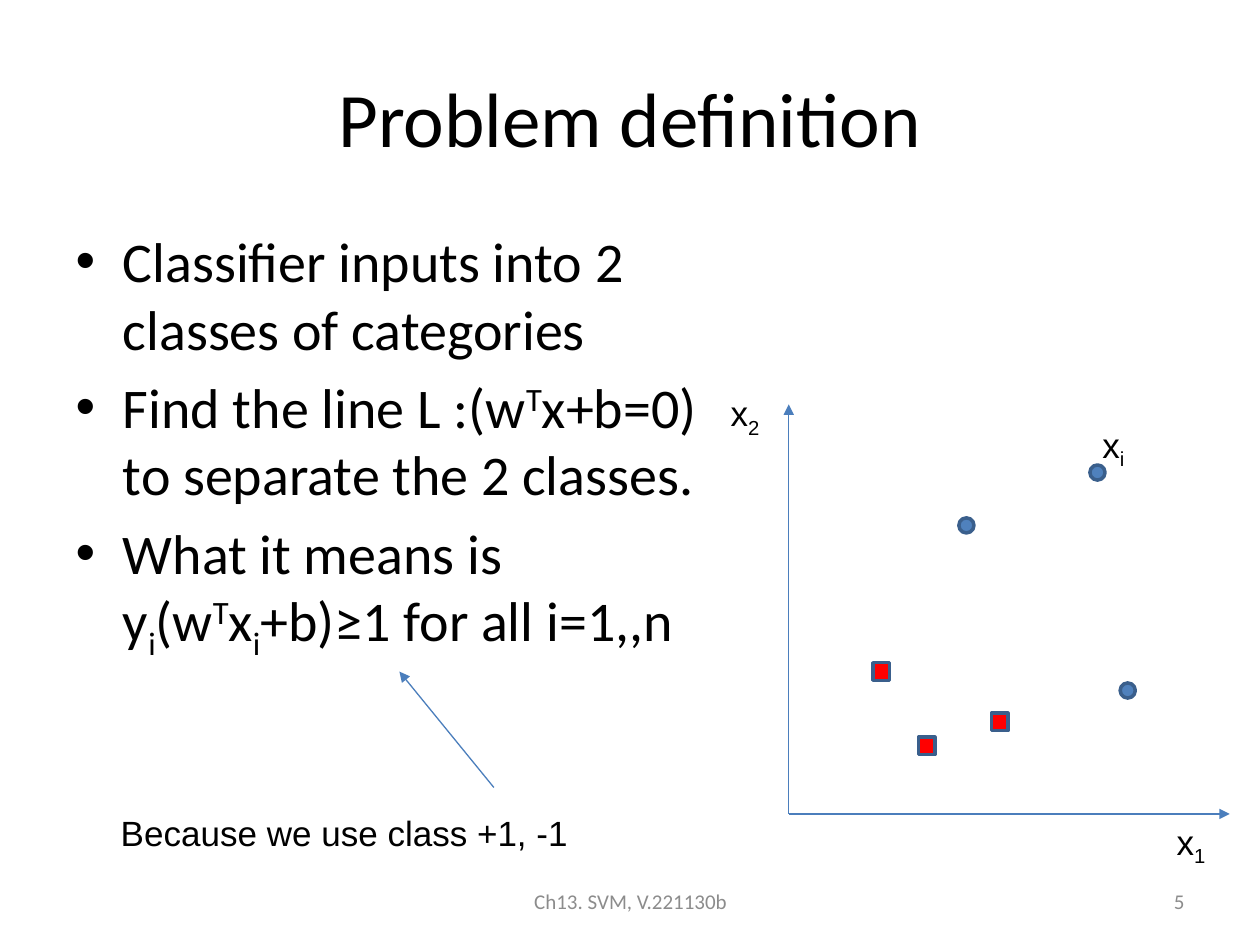
import pptx
import pptx.util
import pptx.dml.color
import pptx.enum.shapes
import pptx.enum.text
import pptx.oxml.ns
from lxml import etree

Inches = pptx.util.Inches
Pt = pptx.util.Pt
RGBColor = pptx.dml.color.RGBColor
MSO_SHAPE = pptx.enum.shapes.MSO_SHAPE
PP_ALIGN = pptx.enum.text.PP_ALIGN
MSO_ANCHOR = pptx.enum.text.MSO_ANCHOR
qn = pptx.oxml.ns.qn

BLACK = RGBColor(0x00, 0x00, 0x00)
GRAY = RGBColor(0x8C, 0x8C, 0x8C)
BLUE = RGBColor(0x4F, 0x81, 0xBD)
RED = RGBColor(0xFF, 0x00, 0x00)
OUTLINE = RGBColor(0x3A, 0x5F, 0x8C)
ARROW = RGBColor(0x4B, 0x7E, 0xBC)

# A piece of text that starts with one of these marks is raised or lowered
BASELINES = {"^": "30000", "_": "-25000"}


def write_paragraph(paragraph, pieces, font="Arial", size=20, color=BLACK,
                    align=PP_ALIGN.LEFT, space_before=0):
    paragraph.alignment = align
    paragraph.space_before = Pt(space_before)
    for piece in pieces:
        baseline = BASELINES.get(piece[0])
        run = paragraph.add_run()
        run.text = piece[1:] if baseline else piece
        run.font.name = font
        run.font.size = Pt(size)
        run.font.color.rgb = color
        if baseline:
            run.font._element.set("baseline", baseline)


class SlideBuilder:
    heading_font = "Calibri"
    marker_line = Pt(2)
    arrow_line = Pt(0.75)

    def __init__(self, presentation):
        self.slide = presentation.slides.add_slide(presentation.slide_layouts[1])

    def place(self, shape, left, top, width, height):
        shape.left, shape.top = Inches(left), Inches(top)
        shape.width, shape.height = Inches(width), Inches(height)

    def title(self, text, *box):
        shape = self.slide.shapes.title
        self.place(shape, *box)
        shape.text_frame.vertical_anchor = MSO_ANCHOR.MIDDLE
        write_paragraph(shape.text_frame.paragraphs[0], [text], size=44,
                        font=self.heading_font, align=PP_ALIGN.CENTER)

    def bullets(self, items, *box):
        shape = self.slide.placeholders[1]
        self.place(shape, *box)
        frame = shape.text_frame
        for index, pieces in enumerate(items):
            paragraph = frame.add_paragraph() if index else frame.paragraphs[0]
            write_paragraph(paragraph, pieces, font=self.heading_font,
                            size=32, space_before=6.4)

    def text(self, pieces, *box, wrap=True, anchor=MSO_ANCHOR.TOP, **style):
        shape = self.slide.shapes.add_textbox(*map(Inches, box))
        shape.text_frame.word_wrap = wrap
        shape.text_frame.vertical_anchor = anchor
        write_paragraph(shape.text_frame.paragraphs[0], pieces, **style)

    def footer(self, text, *box, align):
        self.text([text], *box, anchor=MSO_ANCHOR.MIDDLE, align=align,
                  font=self.heading_font, size=12, color=GRAY)

    def marker(self, kind, fill, *box):
        shape = self.slide.shapes.add_shape(kind, *map(Inches, box))
        shape.shadow.inherit = False
        shape.fill.solid()
        shape.fill.fore_color.rgb = fill
        shape.line.color.rgb = OUTLINE
        shape.line.width = self.marker_line

    def arrow(self, start, end):
        connector = self.slide.shapes.add_connector(
            pptx.enum.shapes.MSO_CONNECTOR.STRAIGHT, *map(Inches, start + end))
        connector.line.color.rgb = ARROW
        connector.line.width = self.arrow_line
        properties = connector._element.spPr
        etree.SubElement(properties.find(qn("a:ln")), qn("a:tailEnd"), type="triangle")
        etree.SubElement(properties, qn("a:effectLst"))


def main():
    presentation = pptx.Presentation()
    presentation.slide_width = Inches(10)
    presentation.slide_height = Inches(7.5)
    builder = SlideBuilder(presentation)

    # Title and list
    builder.title("Problem definition", 0.5, 0.3, 9, 1.25)
    builder.bullets([
        ["Classifier inputs into 2 classes of categories"],
        ["Find the line L :(w", "^T", "x+b=0) to separate the 2 classes."],
        ["What it means is y", "_i", "(w", "^T", "x", "_i", "+b)≥1 for all i=1,,n"],
    ], 0.5, 1.75, 5.2, 4.95)

    # Footer and slide number
    builder.footer("Ch13. SVM, V.221130b", 3.42, 6.95, 3.17, 0.4, align=PP_ALIGN.CENTER)
    builder.footer("5", 7.17, 6.95, 2.33, 0.4, align=PP_ALIGN.RIGHT)

    # Axes with their labels
    origin = (6.26, 6.46)
    builder.arrow(origin, (6.26, 3.21))
    builder.arrow(origin, (9.76, 6.46))
    builder.text(["x", "_1"], 9.24, 6.46, 0.58, 0.44)
    builder.text(["x", "_2"], 5.7, 3.06, 0.58, 0.44)

    # Points of the two classes
    for left, top in [(8.65, 3.69), (8.89, 5.42), (7.61, 4.11)]:
        builder.marker(MSO_SHAPE.OVAL, BLUE, left, top, 0.12, 0.12)
    for left, top in [(7.87, 5.66), (7.29, 5.85), (6.93, 5.26)]:
        builder.marker(MSO_SHAPE.RECTANGLE, RED, left, top, 0.13, 0.14)
    builder.text(["x", "_i"], 8.65, 3.31, 0.38, 0.44, wrap=False)

    # Remark on the inequality
    builder.text(["Because we use class +1, -1"], 0.86, 6.39, 3.78, 0.44, wrap=False)
    builder.arrow((3.92, 6.25), (3.17, 5.33))

    presentation.save("out.pptx")


if __name__ == "__main__":
    main()
